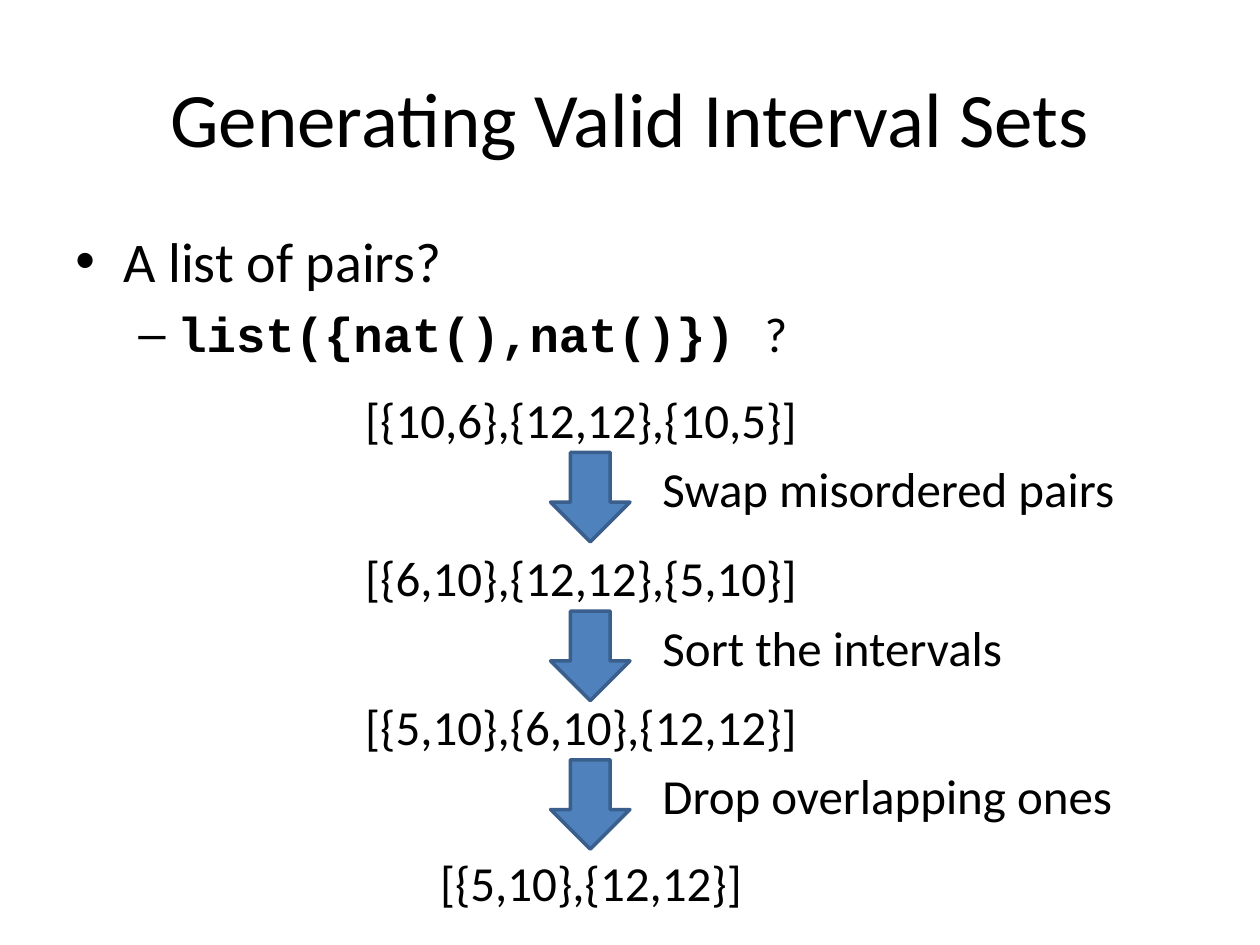
from lxml.etree import SubElement
from pptx import Presentation
from pptx.dml.color import RGBColor
from pptx.enum.shapes import MSO_SHAPE
from pptx.enum.text import MSO_ANCHOR, PP_ALIGN
from pptx.oxml.ns import qn
from pptx.util import Inches, Pt


def rgb(value):
    return RGBColor.from_string(value)


def add_text(box, lines, anchor=MSO_ANCHOR.TOP):
    """Fill a text box with lines of (runs, size, align, bullet).

    A run is (text, font, bold); a bullet is (symbol, indent, hanging) or None.
    """
    frame = box.text_frame
    frame.word_wrap = True
    frame.vertical_anchor = anchor
    for index, (runs, size, align, bullet) in enumerate(lines):
        paragraph = frame.add_paragraph() if index else frame.paragraphs[0]
        paragraph.alignment = align
        if bullet:
            symbol, indent, hanging = bullet
            paragraph.space_before = Pt(size * 0.2)
            properties = paragraph._p.get_or_add_pPr()
            properties.set("marL", str(Inches(indent)))
            properties.set("indent", str(-Inches(hanging)))
            SubElement(properties, qn("a:buFont")).set("typeface", "Arial")
            SubElement(properties, qn("a:buChar")).set("char", symbol)
        for text, font, bold in runs:
            run = paragraph.add_run()
            run.text = text
            run.font.name = font
            run.font.size = Pt(size)
            run.font.bold = bold
            run.font.color.rgb = rgb("000000")


BODY_FONT, CODE_FONT = "Calibri", "Courier New"
LEFT, CENTER = PP_ALIGN.LEFT, PP_ALIGN.CENTER

prs = Presentation()
prs.slide_width, prs.slide_height = Inches(10), Inches(7.5)
slide = prs.slides.add_slide(prs.slide_layouts[6])
shapes = slide.shapes

title = shapes.add_textbox(Inches(0.5), Inches(0.3), Inches(9), Inches(1.25))
add_text(title, [([("Generating Valid Interval Sets", BODY_FONT, False)], 44, CENTER, None)],
         MSO_ANCHOR.MIDDLE)

question = shapes.add_textbox(Inches(0.5), Inches(1.75), Inches(9), Inches(4.95))
add_text(question, [
    ([("A list of pairs?", BODY_FONT, False)], 32, LEFT, ("•", 0.38, 0.38)),
    ([("list({nat(),nat()}) ", CODE_FONT, True), ("?", BODY_FONT, False)],
     28, LEFT, ("–", 0.81, 0.31)),
])

# Each interval list, its top, its alignment and the step that leads to the next one
stages = [
    ("[{10,6},{12,12},{10,5}]", 3.04, LEFT, "Swap misordered pairs"),
    ("[{6,10},{12,12},{5,10}]", 4.3, LEFT, "Sort the intervals"),
    ("[{5,10},{6,10},{12,12}]", 5.48, LEFT, "Drop overlapping ones"),
    ("[{5,10},{12,12}]", 6.72, CENTER, None),
]
for intervals, top, align, step in stages:
    value = shapes.add_textbox(Inches(2.8), Inches(top), Inches(3.78), Inches(0.57))
    add_text(value, [([(intervals, BODY_FONT, False)], 28, align, None)])
    if step is None:
        continue
    step_top = Inches(top + 0.55)
    arrow = shapes.add_shape(MSO_SHAPE.DOWN_ARROW, Inches(4.37), step_top,
                             Inches(0.63), Inches(0.71))
    arrow.shadow.inherit = False
    arrow.fill.solid()
    arrow.fill.fore_color.rgb = rgb("4F81BD")
    arrow.line.color.rgb = rgb("3A5F8C")
    arrow.line.width = Pt(2)
    label = shapes.add_textbox(Inches(5.16), step_top, Inches(3.86), Inches(0.57))
    add_text(label, [([(step, BODY_FONT, False)], 28, LEFT, None)])

prs.save("out.pptx")
